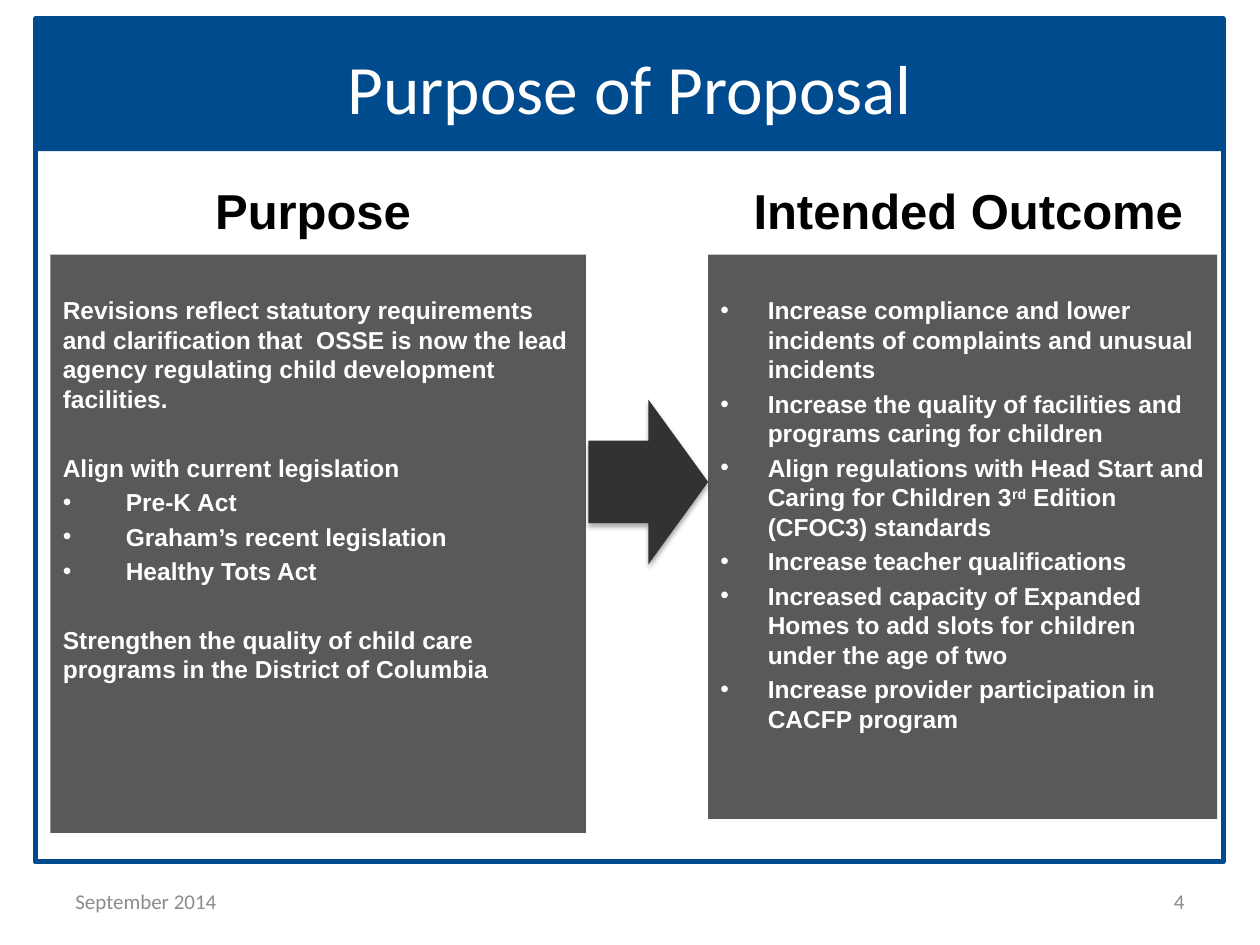
"""Build the Purpose of Proposal slide with two panels joined by an arrow."""
from lxml.etree import SubElement
from pptx import Presentation
from pptx.dml.color import RGBColor
from pptx.enum.shapes import MSO_SHAPE
from pptx.enum.text import MSO_ANCHOR, PP_ALIGN
from pptx.oxml import parse_xml
from pptx.oxml.ns import nsdecls, qn
from pptx.util import Inches, Pt

COLORS = {"blue": "004B8D", "panel": "595959", "arrow": "323232",
          "white": "FFFFFF", "black": "000000", "footer": "8C8C8C"}

PURPOSE = [
    {"text": "Revisions reflect statutory requirements and clarification that  OSSE "
             "is now the lead agency regulating child development facilities."},
    {"text": "Align with current legislation", "gap": True},
    {"text": "Pre-K Act", "indent": 0.5},
    {"text": "Graham’s recent legislation", "indent": 0.5},
    {"text": "Healthy Tots Act", "indent": 0.5},
    {"text": "Strengthen the quality of child care programs in the District of Columbia",
     "gap": True},
]
OUTCOMES = [
    {"text": text, "indent": 0.375} for text in (
        "Increase compliance and lower incidents of complaints and unusual incidents",
        "Increase the quality of facilities and programs caring for children",
        "Align regulations with Head Start and Caring for Children 3^rd^ Edition "
        "(CFOC3) standards",
        "Increase teacher qualifications",
        "Increased capacity of Expanded Homes to add slots for children under the age of two",
        "Increase provider participation in CACFP program",
    )
]
PANELS = [((0.4, 2.02, 4.25, 4.59), PURPOSE), ((5.62, 2.02, 4.04, 4.48), OUTCOMES)]
LABELS = [
    ("Purpose of Proposal", (0.5, 0.3, 9, 0.78),
     {"size": 39.6, "color": "white", "align": PP_ALIGN.CENTER}),
    ("Purpose", (1.6, 1.38, 1.77, 0.57),
     {"size": 28, "font": "Arial", "bold": True, "align": PP_ALIGN.CENTER, "wrap": False}),
    ("Intended Outcome", (5.72, 1.38, 3.93, 0.64),
     {"size": 28, "font": "Arial", "bold": True, "align": PP_ALIGN.CENTER}),
    ("September 2014", (0.5, 6.95, 2.33, 0.4), {"size": 12, "color": "footer"}),
    ("4", (7.17, 6.95, 2.33, 0.4),
     {"size": 12, "color": "footer", "align": PP_ALIGN.RIGHT}),
]
BODY_SIZE = 14
BODY_LINE = 16.86
BODY_SPACE = 2.8


def rgb(name):
    return RGBColor.from_string(COLORS[name])


def add_block(slide, box, kind=MSO_SHAPE.RECTANGLE, fill=None, line=None):
    shape = slide.shapes.add_shape(kind, *map(Inches, box))
    shape.shadow.inherit = False
    if fill:
        shape.fill.solid()
        shape.fill.fore_color.rgb = rgb(fill)
    else:
        shape.fill.background()
    if line:
        shape.line.color.rgb = rgb(line)
        shape.line.width = Pt(3)
    else:
        shape.line.fill.background()
    return shape


def write_text(paragraph, text, size=12, font="Calibri", color="black", bold=False,
               align=PP_ALIGN.LEFT):
    paragraph.alignment = align
    for index, part in enumerate(text.split("^")):
        run = paragraph.add_run()
        run.text = part
        run.font.size = Pt(size)
        run.font.name = font
        run.font.bold = bold
        run.font.color.rgb = rgb(color)
        if index % 2:
            run.font._element.set("baseline", "30000")


def add_bullet(paragraph, indent):
    properties = paragraph._p.get_or_add_pPr()
    properties.set("marL", str(Inches(indent)))
    properties.set("indent", str(-Inches(indent)))
    SubElement(properties, qn("a:buFont")).set("typeface", "Arial")
    SubElement(properties, qn("a:buChar")).set("char", "•")


def add_label(slide, text, box, wrap=True, **style):
    frame = slide.shapes.add_textbox(*map(Inches, box)).text_frame
    frame.word_wrap = wrap
    if style.get("font") != "Arial":
        frame.vertical_anchor = MSO_ANCHOR.MIDDLE
    write_text(frame.paragraphs[0], text, **style)


def add_panel(slide, box, items):
    frame = add_block(slide, box, fill="panel").text_frame
    frame.word_wrap = True
    frame.vertical_anchor = MSO_ANCHOR.TOP
    frame.margin_top = Inches(0.05) + Pt(BODY_LINE + BODY_SPACE)
    for index, item in enumerate(items):
        paragraph = frame.add_paragraph() if index else frame.paragraphs[0]
        paragraph.line_spacing = Pt(BODY_LINE)
        extra = BODY_LINE + BODY_SPACE if item.get("gap") else 0
        paragraph.space_before = Pt(BODY_SPACE + extra)
        write_text(paragraph, item["text"], size=BODY_SIZE, font="Arial",
                   color="white", bold=True)
        if "indent" in item:
            add_bullet(paragraph, item["indent"])


def add_arrow(slide, box):
    arrow = add_block(slide, box, kind=MSO_SHAPE.RIGHT_ARROW, fill="arrow")
    properties = arrow._element.spPr
    properties.remove(properties.find(qn("a:effectLst")))
    properties.append(parse_xml(
        f'<a:effectLst {nsdecls("a")}><a:outerShdw blurRad="{Pt(3.1)}" dist="{Pt(1.8)}" '
        f'dir="5400000" rotWithShape="0"><a:srgbClr val="{COLORS["black"]}">'
        '<a:alpha val="35000"/></a:srgbClr></a:outerShdw></a:effectLst>'))


def main():
    presentation = Presentation()
    presentation.slide_width, presentation.slide_height = Inches(10), Inches(7.5)
    slide = presentation.slides.add_slide(presentation.slide_layouts[6])
    add_block(slide, (0.28, 0.15, 9.43, 1.05), fill="blue")
    add_block(slide, (0.28, 0.15, 9.43, 6.69), line="blue")
    for text, box, style in LABELS:
        add_label(slide, text, box, **style)
    for box, items in PANELS:
        add_panel(slide, box, items)
    add_arrow(slide, (4.67, 3.17, 0.95, 1.31))
    presentation.save("out.pptx")


if __name__ == "__main__":
    main()
